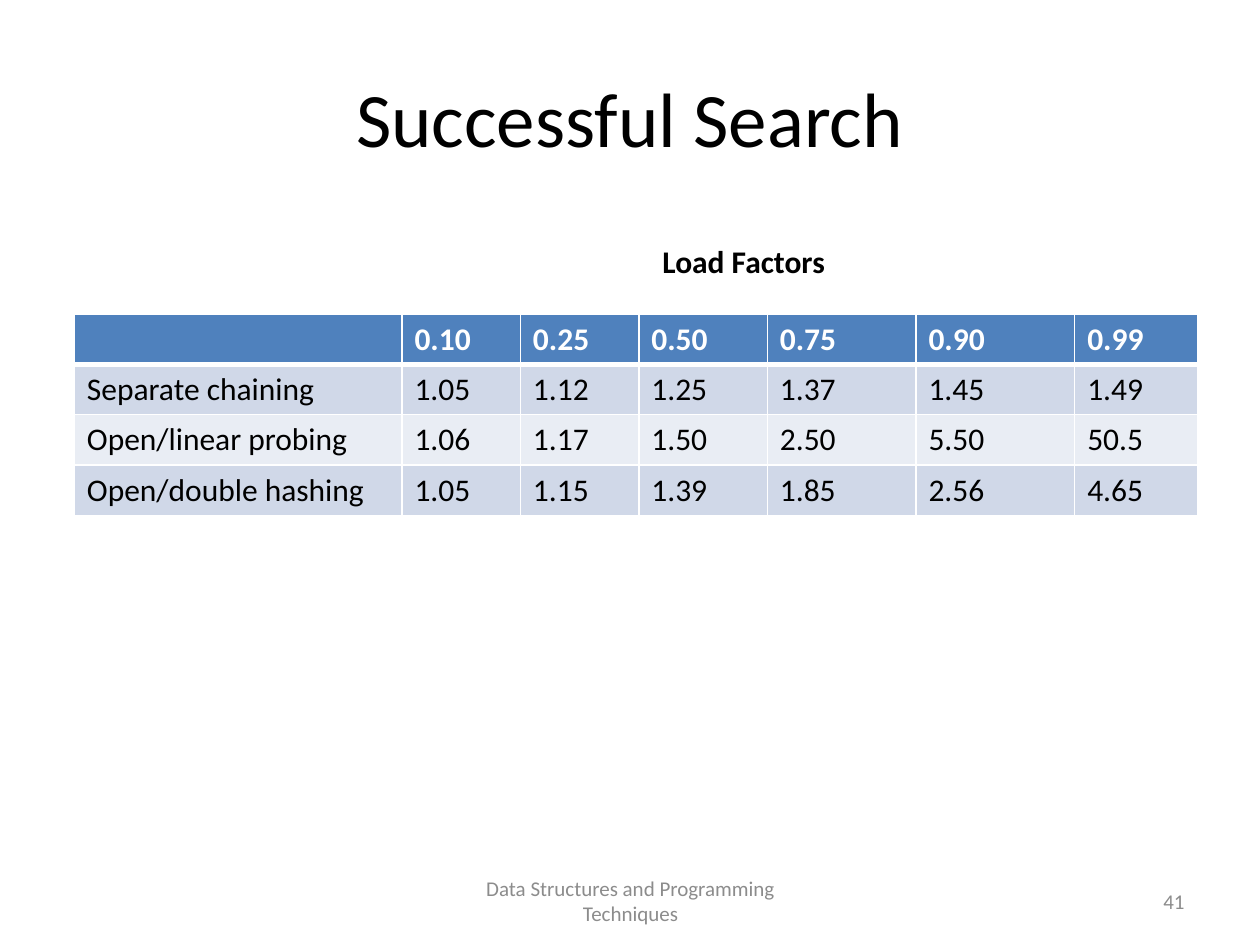
from lxml import etree
from pptx import Presentation
from pptx.dml.color import RGBColor
from pptx.enum import text
from pptx.oxml import ns
from pptx.util import Inches, Pt

BLACK = RGBColor(0x00, 0x00, 0x00)
WHITE = RGBColor(0xFF, 0xFF, 0xFF)
GRAY = RGBColor(0x8C, 0x8C, 0x8C)
HEADER_BLUE = RGBColor(0x4F, 0x81, 0xBD)
BAND_DARK = RGBColor(0xD0, 0xD8, 0xE8)
BAND_LIGHT = RGBColor(0xE9, 0xED, 0xF4)

LEFT, CENTER, RIGHT = text.PP_ALIGN.LEFT, text.PP_ALIGN.CENTER, text.PP_ALIGN.RIGHT
TOP, MIDDLE = text.MSO_ANCHOR.TOP, text.MSO_ANCHOR.MIDDLE

COLUMN_WIDTHS = [2.6, 0.94, 0.94, 1.02, 1.18, 1.26, 0.98]
ROW_HEIGHT = 0.4
PROBE_COUNTS = [
    ["", "0.10", "0.25", "0.50", "0.75", "0.90", "0.99"],
    ["Separate chaining", "1.05", "1.12", "1.25", "1.37", "1.45", "1.49"],
    ["Open/linear probing", "1.06", "1.17", "1.50", "2.50", "5.50", "50.5"],
    ["Open/double hashing", "1.05", "1.15", "1.39", "1.85", "2.56", "4.65"],
]


def write(paragraph, content, size, color, bold=False):
    run = paragraph.add_run()
    run.text = content
    font_format = {"name": "Calibri", "size": Pt(size), "bold": bold}
    for name, value in font_format.items():
        setattr(run.font, name, value)
    run.font.color.rgb = color


def add_text(slide, box, content, size, color, align=LEFT, anchor=TOP, bold=False):
    shape = slide.shapes.add_textbox(*map(Inches, box))
    frame_format = {"word_wrap": True, "vertical_anchor": anchor}
    for name, value in frame_format.items():
        setattr(shape.text_frame, name, value)
    paragraph = shape.text_frame.paragraphs[0]
    paragraph.alignment = align
    write(paragraph, content, size, color, bold)


def set_borders(cell, widths):
    properties = cell._tc.get_or_add_tcPr()
    for side, width in widths.items():
        line = etree.SubElement(properties, ns.qn(f"a:ln{side}"), w=str(Pt(width)))
        fill = etree.SubElement(line, ns.qn("a:solidFill"))
        etree.SubElement(fill, ns.qn("a:srgbClr"), val=str(WHITE))


def row_style(row_index):
    if row_index == 0:
        return HEADER_BLUE, WHITE
    return (BAND_DARK if row_index % 2 else BAND_LIGHT), BLACK


def add_probe_table(slide, left, top):
    width = sum(COLUMN_WIDTHS)
    height = ROW_HEIGHT * len(PROBE_COUNTS)
    table = slide.shapes.add_table(
        len(PROBE_COUNTS), len(COLUMN_WIDTHS),
        Inches(left), Inches(top), Inches(width), Inches(height)).table
    for column, column_width in zip(table.columns, COLUMN_WIDTHS):
        column.width = Inches(column_width)
    for row_index, values in enumerate(PROBE_COUNTS):
        table.rows[row_index].height = Inches(ROW_HEIGHT)
        fill_color, text_color = row_style(row_index)
        is_header = row_index == 0
        borders = {"L": 1, "R": 1, "T": 3 if row_index == 1 else 1,
                   "B": 3 if is_header else 1}
        for column_index, value in enumerate(values):
            cell = table.cell(row_index, column_index)
            set_borders(cell, borders)
            cell.fill.solid()
            cell.fill.fore_color.rgb = fill_color
            if value:
                write(cell.text_frame.paragraphs[0], value, 18, text_color, is_header)


def main():
    presentation = Presentation()
    presentation.slide_width = Inches(10)
    presentation.slide_height = Inches(7.5)
    slide = presentation.slides.add_slide(presentation.slide_layouts[6])
    add_text(slide, (0.5, 0.3, 9, 1.25), "Successful Search", 44, BLACK, CENTER, MIDDLE)
    add_text(slide, (3.42, 6.95, 3.17, 0.4),
             "Data Structures and Programming Techniques", 12, GRAY, CENTER, MIDDLE)
    add_text(slide, (7.17, 6.95, 2.33, 0.4), "41", 12, GRAY, RIGHT, MIDDLE)
    add_probe_table(slide, 0.59, 2.49)
    add_text(slide, (5.16, 1.87, 1.94, 0.4), "Load Factors", 18, BLACK, bold=True)
    presentation.save("out.pptx")


if __name__ == "__main__":
    main()
